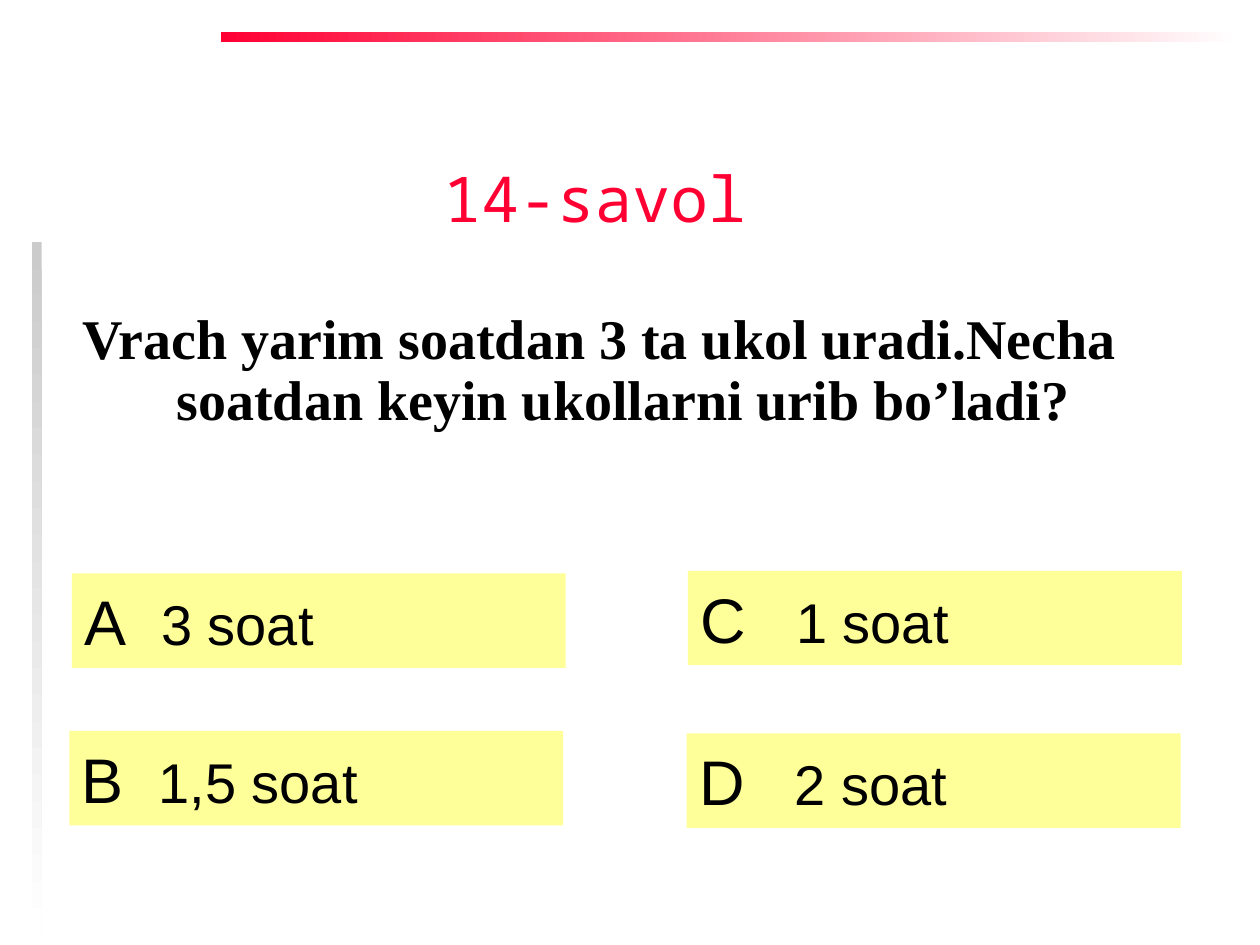
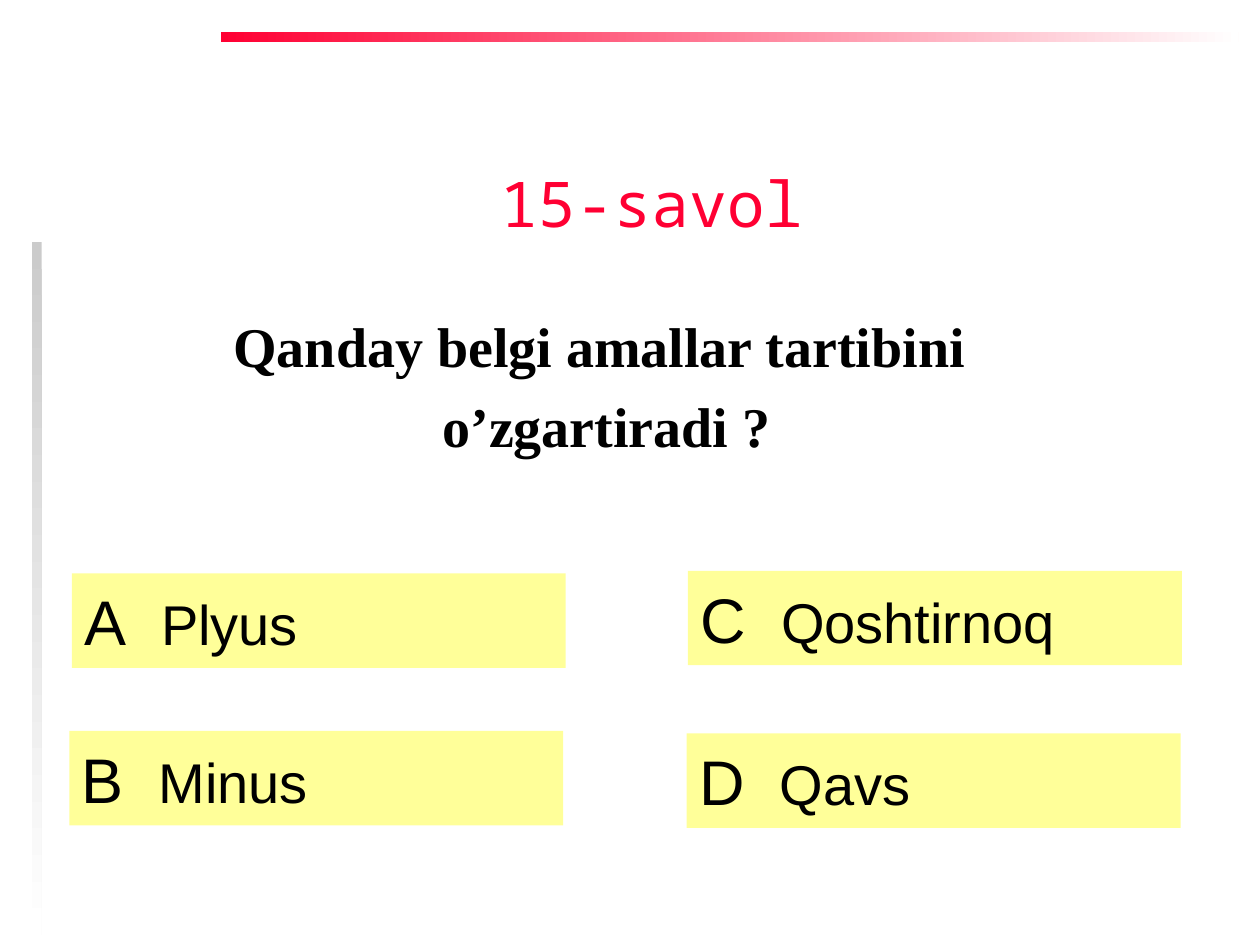
from dataclasses import dataclass

from lxml import etree
from pptx import Presentation
from pptx import util as u
from pptx.dml.color import RGBColor
from pptx.enum import shapes, text
from pptx.oxml.ns import qn

COLORS = {"red": "FF0033", "gray": "CBCBCB", "white": "FFFFFF",
          "yellow": "FFFF99", "black": "000000"}
TITLE = {"name": "Noto Sans Mono", "size": u.Pt(36)}
QUESTION = {"name": "Times New Roman", "size": u.Pt(32), "bold": True}
LETTER = {"name": "Arial", "size": u.Pt(36)}
ANSWER = {"name": "Arial", "size": u.Pt(32)}
HANGING = u.Inches(0.38)


@dataclass
class Band:
    left: float
    top: float
    width: float
    height: float
    color: str
    angle: int


@dataclass
class Answer:
    letter: str
    left: float
    top: float


@dataclass
class Quiz:
    title: str
    title_left: float
    title_top: float
    question: list[str]
    line_spacing: float
    answers: list[str]
    tabs: list[float]  # where each answer starts after its letter


BANDS = [Band(1.75, 0.25, 8.08, 0.08, "red", 0),
         Band(0.25, 1.92, 0.08, 5.5, "gray", 270)]
ANSWERS = [Answer("А", 0.57, 4.55), Answer("B", 0.55, 5.8),
           Answer("C", 5.46, 4.53), Answer("D", 5.45, 5.82)]
QUIZZES = [
    Quiz("14-savol", 3.27, 1.22,
         ["Vrach yarim soatdan 3 ta ukol uradi.Necha soatdan keyin ukollarni urib bo’ladi?"],
         0.9, ["3 soat", "1,5 soat", "1 soat", "2 soat"], [0.61, 0.61, 0.76, 0.76]),
    Quiz(" 15-savol", 3.57, 1.26,
         ["Qanday belgi amallar tartibini", " o’zgartiradi ?"],
         1.0, ["Plyus", "Мinus", "Qoshtirnoq", "Qavs"], [0.61, 0.61, 0.64, 0.64]),
]


def rgb(name: str) -> RGBColor:
    return RGBColor.from_string(COLORS[name])


def box(left: float, top: float, width: float, height: float) -> list[int]:
    return [u.Inches(v) for v in (left, top, width, height)]


def add_run(p, words: str, style: dict, color: str = "black") -> None:
    r = p.add_run()
    r.text = words
    for key, value in style.items():
        setattr(r.font, key, value)
    r.font.color.rgb = rgb(color)


def add_rect(s, left: float, top: float, width: float, height: float):
    sp = s.shapes.add_shape(shapes.MSO_SHAPE.RECTANGLE, *box(left, top, width, height))
    sp.shadow.inherit = False
    sp.line.fill.background()
    return sp


def add_band(s, band: Band) -> None:
    fill = add_rect(s, band.left, band.top, band.width, band.height).fill
    fill.gradient()
    fill.gradient_angle = band.angle
    for stop, color in zip(fill.gradient_stops, (band.color, "white")):
        stop.color.rgb = rgb(color)


def add_question(s, lines: list[str], spacing: float) -> None:
    tf = s.shapes.add_textbox(*box(0.51, 2.37, 8.5, 1.57)).text_frame
    tf.word_wrap = True
    tf.margin_top = u.Inches(0.1)
    for i, line in enumerate(lines):
        p = tf.add_paragraph() if i else tf.paragraphs[0]
        p.alignment = text.PP_ALIGN.CENTER
        p.line_spacing = spacing
        if i:
            p.space_before = u.Pt(7.5)
        pPr = p._p.get_or_add_pPr()
        pPr.set("marL", str(HANGING))
        pPr.set("indent", str(-HANGING))
        add_run(p, line, QUESTION)


def add_answer(s, answer: Answer, words: str, tab: float) -> None:
    sp = add_rect(s, answer.left, answer.top, 3.92, 0.75)
    sp.fill.solid()
    sp.fill.fore_color.rgb = rgb("yellow")
    tf = sp.text_frame
    tf.word_wrap = True
    tf.vertical_anchor = text.MSO_ANCHOR.MIDDLE
    p = tf.paragraphs[0]
    p.alignment = text.PP_ALIGN.LEFT
    tabs = etree.SubElement(p._p.get_or_add_pPr(), qn("a:tabLst"))
    etree.SubElement(tabs, qn("a:tab"), pos=str(u.Inches(tab)), algn="l")
    add_run(p, answer.letter + "\t", LETTER)
    add_run(p, words, ANSWER)


def add_title(s, quiz: Quiz) -> None:
    tf = s.shapes.add_textbox(*box(quiz.title_left, quiz.title_top, 2.9, 0.88)).text_frame
    tf.word_wrap = False
    p = tf.paragraphs[0]
    p.alignment = text.PP_ALIGN.CENTER
    add_run(p, quiz.title, TITLE, "red")


def main() -> None:
    prs = Presentation()
    prs.slide_width, prs.slide_height = u.Inches(10), u.Inches(7.5)
    for quiz in QUIZZES:
        s = prs.slides.add_slide(prs.slide_layouts[6])
        # Shared bands
        for band in BANDS:
            add_band(s, band)
        # Question and its four answers
        add_question(s, quiz.question, quiz.line_spacing)
        for answer, words, tab in zip(ANSWERS, quiz.answers, quiz.tabs):
            add_answer(s, answer, words, tab)
        add_title(s, quiz)
    prs.save("out.pptx")


if __name__ == "__main__":
    main()
